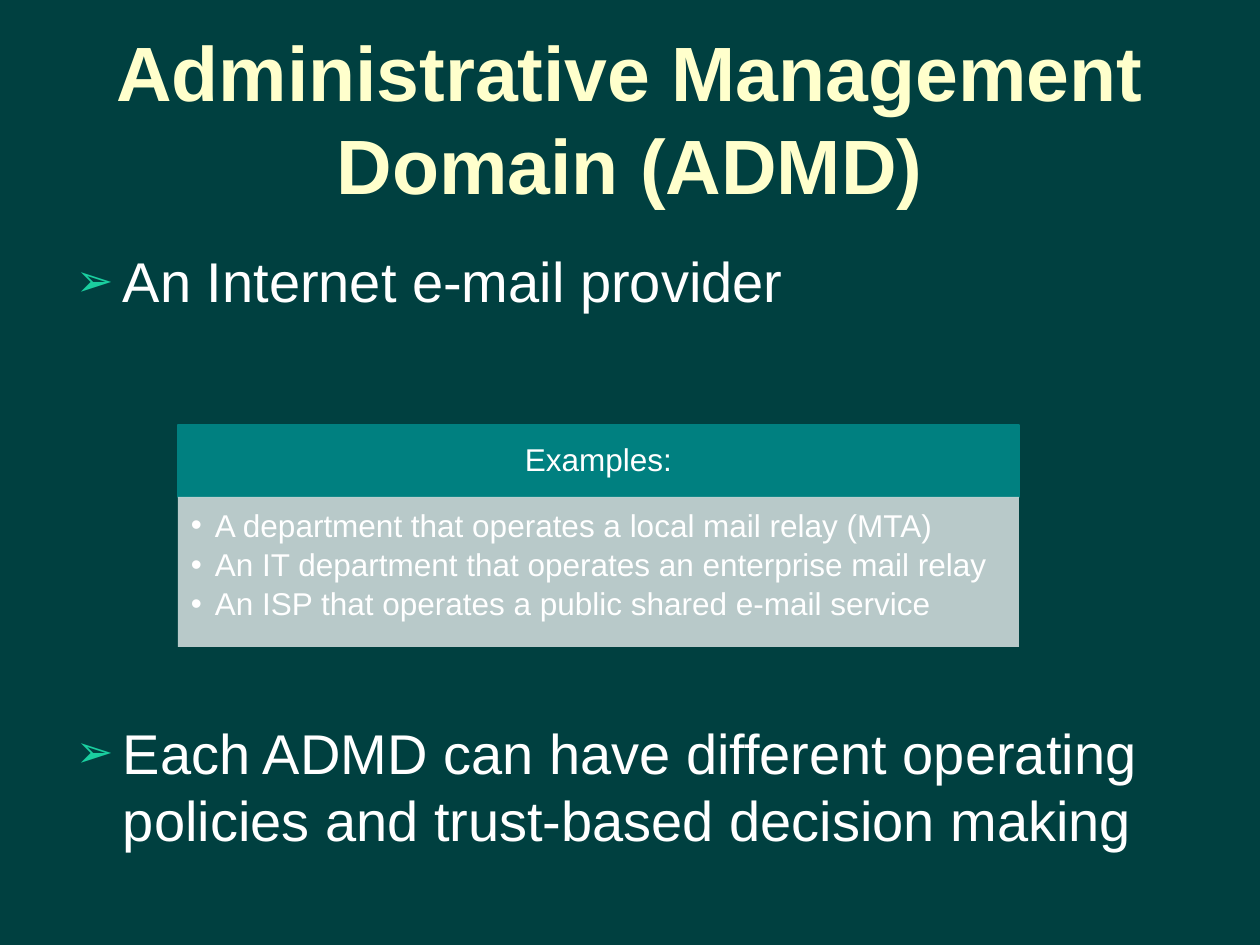
from dataclasses import dataclass

from lxml.etree import SubElement
from pptx import Presentation
from pptx.dml.color import RGBColor
from pptx.enum.shapes import MSO_SHAPE
from pptx.enum.text import MSO_ANCHOR, PP_ALIGN
from pptx.oxml.ns import qn
from pptx.util import Pt

PX = 914400 / 126


@dataclass(frozen=True)
class Theme:
    font: str = "Arial"
    background: str = "004040"
    title: str = "FFFFCC"
    text: str = "FFFFFF"
    bullet: str = "1ACE9F"
    header: str = "008080"
    panel: str = "CCD8D8"
    title_size: int = 44
    body_size: int = 32
    panel_size: int = 18


THEME = Theme()


def emu(px):
    return round(px * PX)


def set_frame(tf, insets, anchor=MSO_ANCHOR.TOP):
    tf.word_wrap = True
    tf.vertical_anchor = anchor
    tf.margin_left, tf.margin_top, tf.margin_right, tf.margin_bottom = map(emu, insets)


def write(tf, text, size, color, bold=False, align=PP_ALIGN.LEFT):
    tf.text = text
    for p in tf.paragraphs:
        p.alignment = align
        for r in p.runs:
            r.font.name, r.font.size, r.font.bold = THEME.font, Pt(size), bold
            r.font.color.rgb = RGBColor.from_string(color)


def add_bullet(p, char, indent, color=None, percent=100):
    pPr = p._p.get_or_add_pPr()
    pPr.set("marL", str(emu(indent)))
    pPr.set("indent", str(-emu(indent)))
    if color:
        SubElement(SubElement(pPr, qn("a:buClr")), qn("a:srgbClr"), val=color)
    SubElement(pPr, qn("a:buSzPct"), val=str(percent * 1000))
    SubElement(pPr, qn("a:buFont"), typeface=THEME.font)
    SubElement(pPr, qn("a:buChar"), char=char)


def add_text_box(s, box):
    return s.shapes.add_textbox(*map(emu, box)).text_frame


def add_rect(s, box, color, opacity=100):
    sp = s.shapes.add_shape(MSO_SHAPE.RECTANGLE, *map(emu, box))
    sp.shadow.inherit = False
    sp.fill.solid()
    sp.fill.fore_color.rgb = RGBColor.from_string(color)
    sp.line.fill.background()
    if opacity < 100:
        clr = sp._element.spPr.find(qn("a:solidFill")).find(qn("a:srgbClr"))
        SubElement(clr, qn("a:alpha"), val=str(opacity * 1000))
    return sp


def add_title(s, box, text):
    tf = add_text_box(s, box)
    set_frame(tf, (13, 6, 13, 6), MSO_ANCHOR.MIDDLE)
    write(tf, text, THEME.title_size, THEME.title, True, PP_ALIGN.CENTER)


def add_body(s, box, points, gap):
    tf = add_text_box(s, box)
    set_frame(tf, (13, 6, 13, 6))
    write(tf, "\n".join(points), THEME.body_size, THEME.text)
    for i, p in enumerate(tf.paragraphs):
        # The gap leaves room for the examples panel
        p.space_before = Pt(gap if i else 0)
        add_bullet(p, "➢", 47, THEME.bullet, 80)


def add_examples(s, box, heading, items):
    x, y, w, h = box
    head_h = 72

    # Header band
    sp = add_rect(s, (x, y, w, head_h), THEME.header)
    sp.line.color.rgb = RGBColor.from_string(THEME.header)
    sp.line.width = Pt(0.75)
    tf = sp.text_frame
    set_frame(tf, (18, 10, 18, 10), MSO_ANCHOR.MIDDLE)
    write(tf, heading, THEME.panel_size, THEME.text, align=PP_ALIGN.CENTER)
    tf.paragraphs[0].line_spacing = 0.9

    # List of examples
    tf = add_rect(s, (x, y + head_h, w, h - head_h), THEME.panel, 90).text_frame
    set_frame(tf, (13, 13, 18, 20))
    write(tf, "\n".join(items), THEME.panel_size, THEME.text)
    for p in tf.paragraphs:
        p.line_spacing = 0.9
        p.space_after = Pt(3)
        add_bullet(p, "•", 24)


def main():
    prs = Presentation()
    prs.slide_width, prs.slide_height = emu(1260), emu(945)
    s = prs.slides.add_slide(prs.slide_layouts[6])
    s.background.fill.solid()
    s.background.fill.fore_color.rgb = RGBColor.from_string(THEME.background)

    add_title(s, (63, 38, 1134, 158), "Administrative Management Domain (ADMD)")
    add_body(s, (63, 241, 1134, 674), [
        "An Internet e-mail provider",
        "Each ADMD can have different operating policies and trust-based decision making",
    ], gap=231)
    add_examples(s, (178, 425, 841, 222), "Examples:", [
        "A department that operates a local mail relay (MTA)",
        "An IT department that operates an enterprise mail relay",
        "An ISP that operates a public shared e-mail service",
    ])
    prs.save("out.pptx")


if __name__ == "__main__":
    main()
